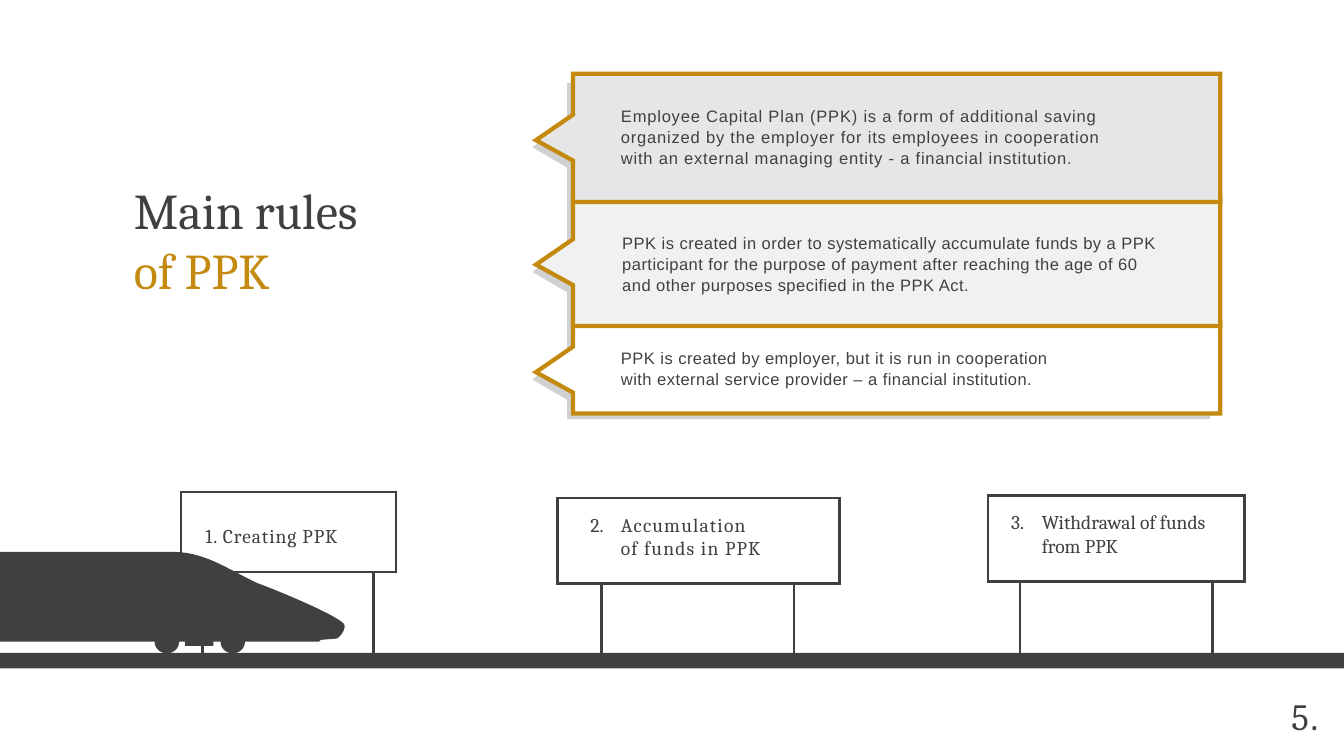
from math import cos, pi, sin

from lxml.etree import SubElement
from pptx import Presentation
from pptx.dml.color import RGBColor
from pptx.enum.shapes import MSO_CONNECTOR as CONN, MSO_SHAPE as SHAPE
from pptx.enum.text import MSO_ANCHOR as ANCHOR, PP_ALIGN as ALIGN
from pptx.oxml.ns import qn
from pptx.util import Pt

COLORS = {
    "dark": "404041", "gold": "C48A10", "white": "FFFFFF",
    "shadow": "D1D1D1", "grey": "E6E6E6", "pale": "F1F1F1",
}
WIDTH, HEIGHT = 1583.28, 890.64
TRACK_TOP, TRACK_HEIGHT = 769, 18.4
RULE = 3.3

CALLOUTS = [
    (86.8, 151.2, 165.2, "grey", (731.5, 123.1, 582.5), 0.9,
     "Employee Capital Plan (PPK) is a form of additional saving organized by the employer "
     "for its employees in cooperation with an external managing entity - a financial institution."),
    (233, 151.2, 311.8, "pale", (733, 272.9, 637.2), 0.5,
     "PPK is created in order to systematically accumulate funds by a PPK participant for the "
     "purpose of payment after reaching the age of 60 and other purposes specified in the PPK Act."),
    (379.6, 107.6, 438.5, "white", (731.5, 408.2, 588.2), 0.5,
     "PPK is created by employer, but it is run in cooperation\v"
     "with external service provider – a financial institution."),
]
SHADOWS = [(97.9, 146.9, 173.5), (244.8, 146.2, 320.4), (391, 102.9, 447.1)]

SIGNS = [
    (213.1, 579.6, 253.4, 94.3, (239, 440), 37.2, 28.8, None, 1.1, "1. Creating PPK"),
    (656.6, 586.8, 332.6, 100.8, (708.5, 935.3), 17.3, 74.9, 2, 1.4,
     "Accumulation\vof funds in PPK"),
    (1163.9, 583.9, 302, 100.8, (1201.7, 1428.5), 17.3, 63.4, 3, 0,
     "Withdrawal of funds\vfrom PPK"),
]


def rgb(name):
    """Look up a named colour."""
    return RGBColor.from_string(COLORS[name])


def paint(sp, fill, line=None, width=0):
    """Set the fill and the mitred outline of a shape."""
    sp.shadow.inherit = False
    sp.fill.solid()
    sp.fill.fore_color.rgb = rgb(fill)
    if line is None:
        sp.line.fill.background()
        return
    sp.line.color.rgb = rgb(line)
    sp.line.width = Pt(width)
    ln = sp._element.spPr.find(qn("a:ln"))
    SubElement(ln, qn("a:miter")).set("lim", "800000")


def add_rect(s, x, y, w, h, fill, line=None, width=0):
    """Add a rectangle."""
    sp = s.shapes.add_shape(SHAPE.RECTANGLE, Pt(x), Pt(y), Pt(w), Pt(h))
    paint(sp, fill, line, width)
    return sp


def add_outline(s, points, fill, line=None, width=0):
    """Add a closed freeform through the points."""
    start, *rest = [(Pt(x), Pt(y)) for x, y in points]
    builder = s.shapes.build_freeform(*start)
    builder.add_line_segments(rest, close=True)
    paint(builder.convert_to_shape(), fill, line, width)


def add_pennant(s, edges, top, height, tip_y, fill, line=None, width=0):
    """Add a box whose left side points outwards at tip_y."""
    tip, left, right = edges
    bottom = top + height
    points = [(right, top), (left, top), (left, tip_y - 30), (tip, tip_y),
              (left, tip_y + 24), (left, bottom), (right, bottom)]
    add_outline(s, points, fill, line, width)


def add_post(s, x, top):
    """Add a post that stands on the track."""
    cn = s.shapes.add_connector(CONN.STRAIGHT, Pt(x), Pt(top), Pt(x), Pt(TRACK_TOP))
    cn.line.color.rgb = rgb("dark")
    cn.line.width = Pt(RULE)
    SubElement(cn._element.spPr, qn("a:effectLst"))


def write(sp, runs, size, font, spacing=0, top=0.7, leading=None, margin=0, number=None):
    """Write one paragraph of (text, colour) runs, breaking lines at each \\v."""
    tf = sp.text_frame
    tf.word_wrap = True
    tf.vertical_anchor = ANCHOR.TOP
    tf.margin_left = tf.margin_right = tf.margin_bottom = 0
    tf.margin_top = Pt(top)
    p = tf.paragraphs[0]
    p.alignment = ALIGN.LEFT
    p.line_spacing = leading
    ppr = p._p.get_or_add_pPr()
    ppr.set("marL", str(Pt(margin)))
    if number:
        ppr.set("indent", str(Pt(-36)))
        bullet = SubElement(ppr, qn("a:buAutoNum"))
        bullet.set("type", "arabicPeriod")
        bullet.set("startAt", str(number))
    for text, color in runs:
        for i, part in enumerate(text.split("\v")):
            if i:
                p.add_line_break()
            if not part:
                continue
            r = p.add_run()
            r.text = part
            r.font.size = Pt(size)
            r.font.name = font
            r.font.color.rgb = rgb(color)
            r._r.get_or_add_rPr().set("spc", str(round(spacing * 100)))


def add_text(s, x, y, w, h, runs, size, font, **style):
    """Add a text box."""
    sp = s.shapes.add_textbox(Pt(x), Pt(y), Pt(w), Pt(h))
    write(sp, runs, size, font, **style)


def add_sign(s, x, y, w, h, posts, top, margin, number, spacing, text):
    """Add a sign board on two posts."""
    for post in posts:
        add_post(s, post, y + h)
    board = add_rect(s, x, y, w, h, "white", "dark", RULE)
    write(board, [(text, "dark")], 23, "Cambria", spacing=spacing,
          top=top, margin=margin, number=number)


def curve(*knots, steps=12):
    """Return points along a cubic Bezier curve."""
    weights = [((1 - t) ** 3, 3 * t * (1 - t) ** 2, 3 * t * t * (1 - t), t ** 3)
               for t in (i / steps for i in range(steps + 1))]
    return [tuple(sum(k * knot[axis] for k, knot in zip(ws, knots)) for axis in (0, 1))
            for ws in weights]


def wheel(x, y, steps=20):
    """Return the lower half of a wheel, from right to left."""
    return [(x + 14.4 * cos(pi * i / steps), y + 13.7 * sin(pi * i / steps))
            for i in range(steps + 1)]


def add_train(s):
    """Add the front of the train, entering from the left edge."""
    roof, floor = 650.2, 756
    points = [(0, roof)]
    points += curve((195.8, roof), (218.9, 649.4), (233.3, 653.8), (247.7, 659.5))
    points += curve((247.7, 659.5), (265.7, 666.7), (295.2, 684), (303.1, 686.9))
    points += curve((303.1, 686.9), (319, 692.6), (392.4, 722.2), (404.6, 734.4))
    points += curve((404.6, 734.4), (409.7, 739.4), (399.6, 752.4), (396, 752.4))
    points += [(378, 753.8), (375.8, floor)]
    points += wheel(274.2, floor)
    points += [(251.3, floor), (251.3, 761), (218.2, 761), (218.2, floor)]
    points += wheel(196.6, floor) + [(0, floor)]
    add_outline(s, points, "dark")


def main():
    """Build the slide and save it."""
    prs = Presentation()
    prs.slide_width, prs.slide_height = Pt(WIDTH), Pt(HEIGHT)
    s = prs.slides.add_slide(prs.slide_layouts[6])
    for top, height, tip_y in SHADOWS:
        add_pennant(s, (627.1, 668.2, 1425.6), top, height, tip_y, "shadow")
    for top, height, tip_y, fill, *_ in reversed(CALLOUTS):
        add_pennant(s, (631.4, 675, 1437.5), top, height, tip_y, fill, "gold", 5)
    for *_, (x, y, w), spacing, text in CALLOUTS:
        add_text(s, x, y, w, 75, [(text, "dark")], 19.5, "Arial",
                 spacing=spacing, leading=Pt(24.7))
    add_text(s, 157.7, 209.5, 366.5, 141, [("Main rules\v", "dark"), ("of PPK", "gold")],
             59, "Cambria", spacing=0.1, leading=1.01)
    for sign in SIGNS:
        add_sign(s, *sign)
    add_rect(s, 0, TRACK_TOP, WIDTH, TRACK_HEIGHT, "dark")
    add_train(s)
    add_text(s, 1519.2, 821.5, 39.6, 50.4, [("5.", "dark")], 43.5, "Cambria",
             spacing=2, top=0, leading=Pt(48.4), margin=2.2)
    prs.save("out.pptx")


if __name__ == "__main__":
    main()
